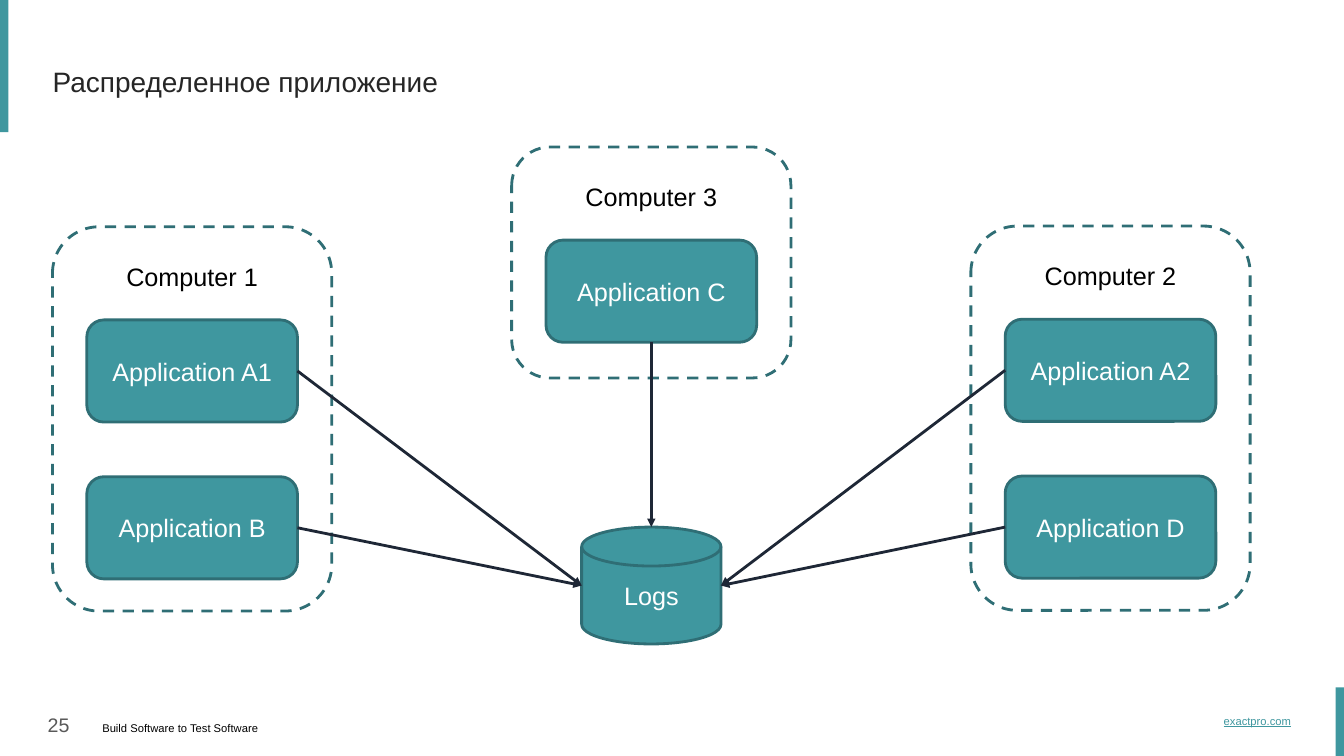
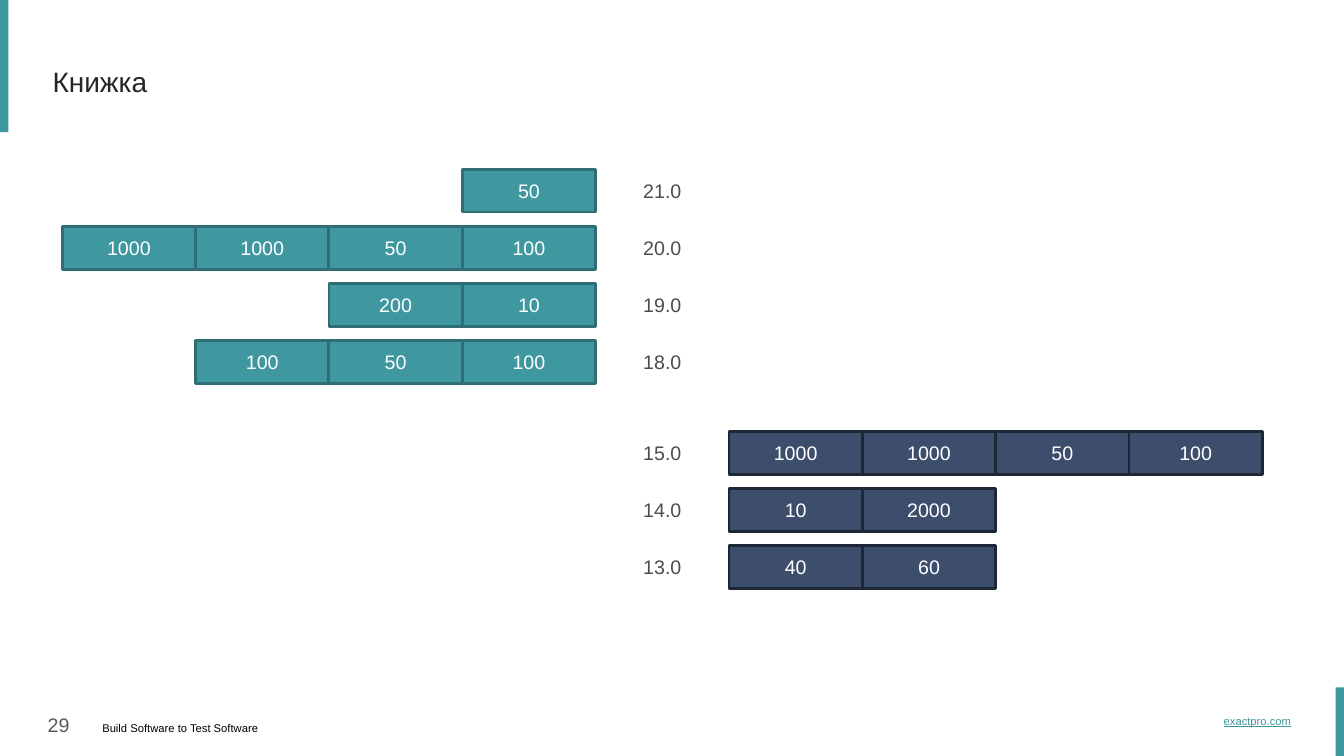
from dataclasses import dataclass

from lxml.etree import SubElement
from pptx import Presentation
from pptx.dml.color import RGBColor
from pptx.enum.dml import MSO_LINE
from pptx.enum.shapes import MSO_CONNECTOR, MSO_SHAPE
from pptx.enum.text import MSO_ANCHOR, MSO_AUTO_SIZE, PP_ALIGN
from pptx.oxml.ns import qn
from pptx.presentation import Presentation as Deck
from pptx.shapes.autoshape import Shape
from pptx.slide import Slide
from pptx.text.text import TextFrame
from pptx.util import Pt

FONT = "Arial"
COLORS = {
    "teal": "3F979F",
    "teal_edge": "2F6E75",
    "navy": "3C4E6C",
    "navy_edge": "1E2736",
    "title": "262626",
    "page": "595959",
    "price": "4C4C4C",
    "black": "000000",
    "white": "FFFFFF",
}
LINE_WIDTH = 2
MARGIN = 37.5

# Distributed application diagram
COMPUTER_WIDTH = 199.5
APP_WIDTH, APP_HEIGHT = 150.5, 73
APP_TOP, APP_PITCH = 66.5, 112
LABEL_TOP, LABEL_HEIGHT = 21, 29
LOGS_BOX = (415.5, 376.5, 99.5, 83.5)

# Connection sites of rounded rectangles and of the magnetic disk
TOP, LEFT, BOTTOM, RIGHT = range(4)
DISK_TOP, DISK_LEFT, DISK_RIGHT = 1, 2, 4

# Order book grid
CELL_WIDTH, CELL_HEIGHT, ROW_PITCH = 95.25, 30.5, 40.8
PRICE_LEFT = 425.5

Box = tuple[float, float, float, float]


@dataclass(frozen=True)
class Computer:
    name: str
    left: float
    top: float
    height: float
    apps: tuple[str, ...]
    app_site: int
    disk_site: int


@dataclass(frozen=True)
class PriceLevel:
    price: str
    orders: tuple[str, ...]


@dataclass(frozen=True)
class BookSide:
    top: float
    fill: str
    edge: str
    direction: int  # -1 grows leftwards from the prices, 1 rightwards
    levels: tuple[PriceLevel, ...]


COMPUTERS = (
    Computer("Computer 1", MARGIN, 162, 274.5,
             ("Application A1", "Application B"), RIGHT, DISK_LEFT),
    Computer("Computer 2", 693.5, 161.5, 274.5,
             ("Application A2", "Application D"), LEFT, DISK_RIGHT),
    Computer("Computer 3", 365.5, 105, 165,
             ("Application C",), BOTTOM, DISK_TOP),
)

# Orders are listed from left to right
BOOK = (
    BookSide(121, "teal", "teal_edge", -1, (
        PriceLevel("21.0", ("50",)),
        PriceLevel("20.0", ("1000", "1000", "50", "100")),
        PriceLevel("19.0", ("200", "10")),
        PriceLevel("18.0", ("100", "50", "100")),
    )),
    BookSide(308.2, "navy", "navy_edge", 1, (
        PriceLevel("15.0", ("1000", "1000", "50", "100")),
        PriceLevel("14.0", ("10", "2000")),
        PriceLevel("13.0", ("40", "60")),
    )),
)


def rgb(color: str) -> RGBColor:
    return RGBColor.from_string(COLORS[color])


def write(frame: TextFrame, text: str, *, size: float, color: str,
          align: PP_ALIGN = PP_ALIGN.LEFT, anchor: MSO_ANCHOR = MSO_ANCHOR.TOP,
          underline: bool = False, wrap: bool = True) -> None:
    frame.text = text
    frame.word_wrap = wrap
    frame.vertical_anchor = anchor
    paragraph = frame.paragraphs[0]
    paragraph.alignment = align
    font = paragraph.runs[0].font
    font.name = FONT
    font.size = Pt(size)
    font.color.rgb = rgb(color)
    if underline:
        font.underline = True


def add_text(slide: Slide, box: Box, text: str, **style) -> None:
    textbox = slide.shapes.add_textbox(*map(Pt, box))
    write(textbox.text_frame, text, **style)


def add_block(slide: Slide, kind: MSO_SHAPE, box: Box, *, fill: str | None = None,
              edge: str | None = None, dashed: bool = False,
              text: str = "", size: float = 18) -> Shape:
    block = slide.shapes.add_shape(kind, *map(Pt, box))
    block.shadow.inherit = False
    if fill:
        block.fill.solid()
        block.fill.fore_color.rgb = rgb(fill)
    else:
        block.fill.background()
    if edge:
        block.line.color.rgb = rgb(edge)
        block.line.width = Pt(LINE_WIDTH)
        if dashed:
            block.line.dash_style = MSO_LINE.DASH
    else:
        block.line.fill.background()
    if text:
        write(block.text_frame, text, size=size, color="white",
              align=PP_ALIGN.CENTER, anchor=MSO_ANCHOR.MIDDLE)
    return block


def disk_point(disk: Shape, site: int) -> tuple[int, int]:
    middle_x = disk.left + disk.width // 2
    middle_y = disk.top + disk.height // 2
    return {
        DISK_TOP: (middle_x, disk.top),
        DISK_LEFT: (disk.left, middle_y),
        DISK_RIGHT: (disk.left + disk.width, middle_y),
    }[site]


def add_arrow(slide: Slide, app: Shape, app_site: int, disk: Shape, disk_site: int) -> None:
    end = disk_point(disk, disk_site)
    arrow = slide.shapes.add_connector(MSO_CONNECTOR.STRAIGHT, app.left, app.top, *end)
    arrow.begin_connect(app, app_site)
    # end_connect() knows four sites only, the disk has five
    links = arrow.element.find(".//" + qn("p:cNvCxnSpPr"))
    SubElement(links, qn("a:endCxn"), id=str(disk.shape_id), idx=str(disk_site))
    arrow.line.color.rgb = rgb("navy_edge")
    arrow.line.width = Pt(LINE_WIDTH)
    SubElement(arrow.line._get_or_add_ln(), qn("a:tailEnd"), type="triangle")
    SubElement(arrow.element.spPr, qn("a:effectLst"))


def add_page(deck: Deck, title: str, number: int) -> Slide:
    """Add a slide with its title, edge bands and footer."""
    slide = deck.slides.add_slide(deck.slide_layouts.get_by_name("Title Only"))
    for band in ((0, 0, 6, 94.5), (954, 491, 6, 49)):
        add_block(slide, MSO_SHAPE.RECTANGLE, band, fill="teal")
    add_text(slide, (27, 506, 75, 29), str(number), size=14, color="page")
    add_text(slide, (66, 512, 166, 22), "Build Software to Test Software",
             size=8, color="black")
    add_text(slide, (867, 504, 66, 22), "exactpro.com", size=8, color="teal",
             anchor=MSO_ANCHOR.MIDDLE, underline=True, wrap=False)

    heading = slide.shapes.title
    heading.left, heading.top, heading.width, heading.height = map(
        Pt, (MARGIN, 21.5, 864, 73))
    frame = heading.text_frame
    frame.margin_left = frame.margin_top = frame.margin_right = frame.margin_bottom = 0
    frame.auto_size = MSO_AUTO_SIZE.NONE
    write(frame, title, size=20, color="title", anchor=MSO_ANCHOR.MIDDLE)
    return slide


def add_computer(slide: Slide, computer: Computer) -> list[Shape]:
    """Draw a computer and return its applications."""
    app_left = computer.left + (COMPUTER_WIDTH - APP_WIDTH) / 2
    apps = [
        add_block(slide, MSO_SHAPE.ROUNDED_RECTANGLE,
                  (app_left, computer.top + APP_TOP + row * APP_PITCH, APP_WIDTH, APP_HEIGHT),
                  fill="teal", edge="teal_edge", text=name)
        for row, name in enumerate(computer.apps)
    ]
    add_block(slide, MSO_SHAPE.ROUNDED_RECTANGLE,
              (computer.left, computer.top, COMPUTER_WIDTH, computer.height),
              edge="teal_edge", dashed=True)
    add_text(slide, (computer.left, computer.top + LABEL_TOP, COMPUTER_WIDTH, LABEL_HEIGHT),
             computer.name, size=18, color="black", align=PP_ALIGN.CENTER)
    return apps


def add_distributed_application(deck: Deck) -> None:
    slide = add_page(deck, "Распределенное приложение", 25)
    logs = add_block(slide, MSO_SHAPE.FLOWCHART_MAGNETIC_DISK, LOGS_BOX,
                     fill="teal", edge="teal_edge", text="Logs")
    for computer in COMPUTERS:
        for app in add_computer(slide, computer):
            add_arrow(slide, app, computer.app_site, logs, computer.disk_site)


def add_book_side(slide: Slide, side: BookSide) -> None:
    for row, level in enumerate(side.levels):
        top = side.top + row * ROW_PITCH
        add_text(slide, (PRICE_LEFT, top, CELL_WIDTH, CELL_HEIGHT), level.price,
                 size=14, color="price", align=PP_ALIGN.CENTER, anchor=MSO_ANCHOR.MIDDLE)
        first_column = 1 if side.direction > 0 else -len(level.orders)
        for column, quantity in enumerate(level.orders, first_column):
            add_block(slide, MSO_SHAPE.RECTANGLE,
                      (PRICE_LEFT + column * CELL_WIDTH, top, CELL_WIDTH, CELL_HEIGHT),
                      fill=side.fill, edge=side.edge, text=quantity, size=14)


def add_order_book(deck: Deck) -> None:
    slide = add_page(deck, "Книжка", 29)
    for side in BOOK:
        add_book_side(slide, side)


def main() -> None:
    deck = Presentation()
    deck.slide_width, deck.slide_height = Pt(960), Pt(540)
    add_distributed_application(deck)
    add_order_book(deck)
    deck.save("out.pptx")


if __name__ == "__main__":
    main()
